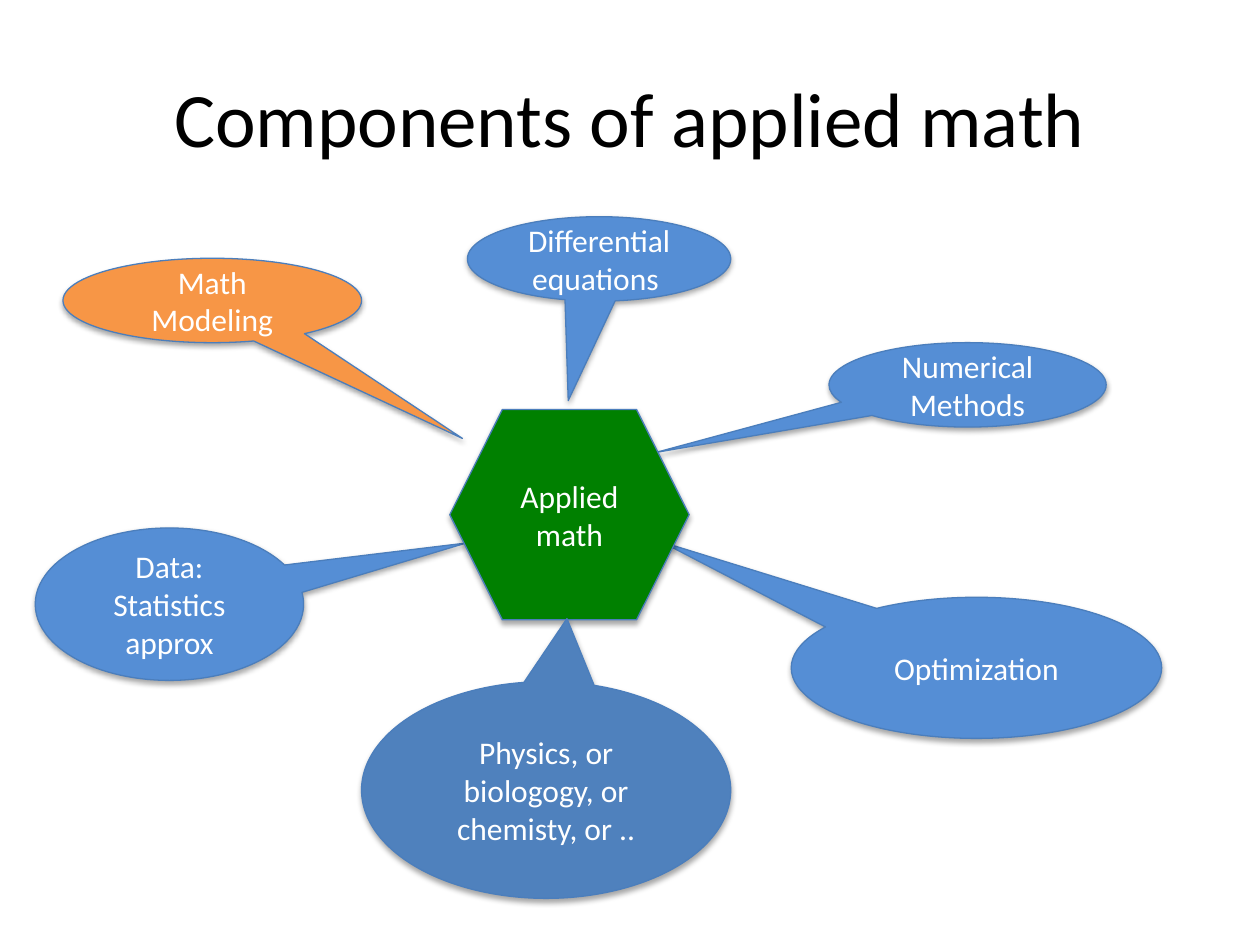
import pptx
import pptx.util
import pptx.dml.color
import pptx.enum.shapes
import pptx.enum.text
import pptx.oxml
import pptx.oxml.ns

Kind = pptx.enum.shapes.MSO_SHAPE

# Content: boxes are (left, top, width, height) and tips (x, y), in grid cells
COLS, ROWS = 100, 75
TITLE = ("Components of applied math", (5, 3, 90, 12.5))
HUB = (["Applied math"], (35.7, 32.5, 19, 16.7), "green")
BACK = [
    (["Optimization"], (62.8, 47.4, 29.4, 11.2), (52.5, 43), "blue"),
    (["Numerical Methods"], (65.8, 27.2, 22, 6.7), (52.1, 35.9), "blue"),
    (["Differential equations "], (37.1, 17.2, 20.9, 6.7), (45.1, 31.8), "blue"),
    (["Math Modeling"], (5, 20.5, 23.7, 6.7), (36.7, 34.8), "orange"),
    (["Data: Statistics", "approx"], (2.8, 41.9, 21.3, 12.1), (37, 43.1), "blue"),
]
FRONT = [
    (["Physics, or biologogy, or chemisty, or .."],
     (28.7, 54.1, 29.3, 17.2), (45, 49.1), "steel"),
]
COLORS = {"blue": "558ED5", "steel": "4F81BD", "orange": "F79646",
          "green": "008000", "line": "4B7EBC", "white": "FFFFFF",
          "black": "000000"}
SHADOW = (
    '<a:effectLst %s><a:outerShdw blurRad="40000" dist="23000" dir="5400000" '
    'rotWithShape="0"><a:srgbClr val="%s"><a:alpha val="35000"/></a:srgbClr>'
    '</a:outerShdw></a:effectLst>'
    % (pptx.oxml.ns.nsdecls("a"), COLORS["black"]))

deck = pptx.Presentation()
deck.slide_width = pptx.util.Inches(10)
deck.slide_height = pptx.util.Inches(7.5)
slide = deck.slides.add_slide(deck.slide_layouts[5])


def color(name):
    return pptx.dml.color.RGBColor.from_string(COLORS[name])


def place(box):
    """Turn a box in grid cells into slide lengths."""
    cell_w, cell_h = deck.slide_width / COLS, deck.slide_height / ROWS
    x, y, w, h = box
    return [round(v) for v in (x * cell_w, y * cell_h, w * cell_w, h * cell_h)]


def write(shape, lines, size=18, ink="white", font="Calibri"):
    frame = shape.text_frame
    frame.word_wrap = True
    frame.vertical_anchor = pptx.enum.text.MSO_ANCHOR.MIDDLE
    for i, line in enumerate(lines):
        para = frame.add_paragraph() if i else frame.paragraphs[0]
        para.alignment = pptx.enum.text.PP_ALIGN.CENTER
        run = para.add_run()
        run.text = line
        run.font.size = pptx.util.Pt(size)
        run.font.name = font
        run.font.color.rgb = color(ink)


def draw(kind, lines, box, fill):
    shape = slide.shapes.add_shape(kind, *place(box))
    shape.fill.solid()
    shape.fill.fore_color.rgb = color(fill)
    shape.line.color.rgb = color("line")
    shape.line.width = pptx.util.Pt(0.75)
    shape._element.spPr.append(pptx.oxml.parse_xml(SHADOW))
    write(shape, lines)
    return shape


def callout(lines, box, tip, fill):
    """Draw an oval whose pointer ends at the tip."""
    shape = draw(Kind.OVAL_CALLOUT, lines, box, fill)
    x, y, w, h = box
    shape.adjustments[0] = (tip[0] - x) / w - 0.5
    shape.adjustments[1] = (tip[1] - y) / h - 0.5


# Title
title = slide.shapes.title
title.left, title.top, title.width, title.height = place(TITLE[1])
write(title, [TITLE[0]], size=44, ink="black")

# Components around the hub, which covers some of the pointers
for item in BACK:
    callout(*item)
draw(Kind.HEXAGON, *HUB)
for item in FRONT:
    callout(*item)

deck.save("out.pptx")
